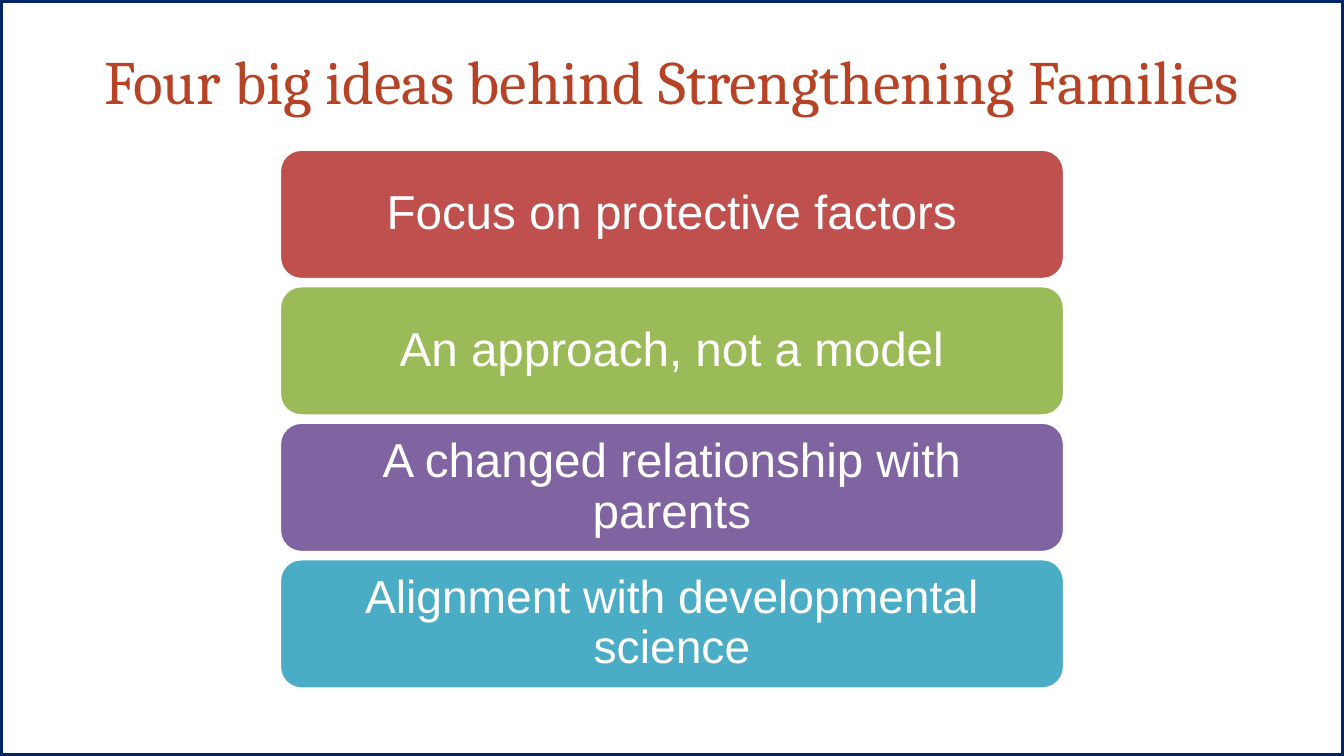
from pptx import Presentation
from pptx.dml.color import RGBColor
from pptx.enum.shapes import MSO_SHAPE
from pptx.enum.text import MSO_ANCHOR, MSO_AUTO_SIZE, PP_ALIGN
from pptx.util import Pt

SLIDE_WIDTH, SLIDE_HEIGHT = Pt(960), Pt(540)
NAVY = RGBColor(0x00, 0x26, 0x63)
RUST = RGBColor(0xB6, 0x43, 0x26)
WHITE = RGBColor(0xFF, 0xFF, 0xFF)
RED = RGBColor(0xC0, 0x50, 0x4D)
GREEN = RGBColor(0x9B, 0xBB, 0x59)
PURPLE = RGBColor(0x80, 0x64, 0xA2)
TEAL = RGBColor(0x4B, 0xAC, 0xC6)

IDEAS = [
    ("Focus on protective factors", RED, 34),
    ("An approach, not a model", GREEN, 34),
    ("A changed relationship with parents", PURPLE, 34),
    ("Alignment with developmental science", TEAL, 33),
]


def write_text(shape, text, *, font, size, color, spacing=1.0, inset=(7.2, 3.6)):
    """Fill the shape with one centred paragraph; inset is (sides, top and bottom) in points."""
    frame = shape.text_frame
    frame.word_wrap = True
    frame.auto_size = MSO_AUTO_SIZE.NONE
    frame.vertical_anchor = MSO_ANCHOR.MIDDLE
    frame.margin_left = frame.margin_right = Pt(inset[0])
    frame.margin_top = frame.margin_bottom = Pt(inset[1])
    paragraph = frame.paragraphs[0]
    paragraph.alignment = PP_ALIGN.CENTER
    paragraph.line_spacing = spacing
    run = paragraph.add_run()
    run.text = text
    run.font.name = font
    run.font.size = Pt(size)
    run.font.color.rgb = color


def add_border(slide, left, top, width, height):
    border = slide.shapes.add_shape(MSO_SHAPE.RECTANGLE, left, top, width, height)
    border.shadow.inherit = False
    border.fill.background()
    border.line.color.rgb = NAVY
    border.line.width = Pt(4.5)


def place_title(slide, left, top, width, height):
    title = slide.shapes.title
    title.left, title.top, title.width, title.height = left, top, width, height
    write_text(title, "Four big ideas behind Strengthening Families",
               font="Cambria", size=44, color=RUST)


def add_ideas(slide, left, top, width, height, gap):
    """Stack the ideas as equal bars that fill the box."""
    bar_height = (height - gap * (len(IDEAS) - 1)) // len(IDEAS)
    stack = slide.shapes.add_group_shape()
    for row, (idea, color, size) in enumerate(IDEAS):
        bar = stack.shapes.add_shape(MSO_SHAPE.ROUNDED_RECTANGLE, left,
                                     top + row * (bar_height + gap), width, bar_height)
        bar.shadow.inherit = False
        bar.fill.solid()
        bar.fill.fore_color.rgb = color
        bar.line.color.rgb = WHITE
        bar.line.width = Pt(2)
        write_text(bar, idea, font="Arial", size=size, color=WHITE,
                   spacing=0.9, inset=(10.2, 5.1))


def main():
    deck = Presentation()
    deck.slide_width, deck.slide_height = SLIDE_WIDTH, SLIDE_HEIGHT
    slide = deck.slides.add_slide(deck.slide_layouts[5])
    add_border(slide, 0, 0, SLIDE_WIDTH, SLIDE_HEIGHT)
    place_title(slide, 0, Pt(12), SLIDE_WIDTH, Pt(90))
    ideas_width = Pt(560.4)
    add_ideas(slide, (SLIDE_WIDTH - ideas_width) // 2, Pt(106.8),
              ideas_width, Pt(385.2), gap=Pt(4.8))
    deck.save("out.pptx")


if __name__ == "__main__":
    main()
